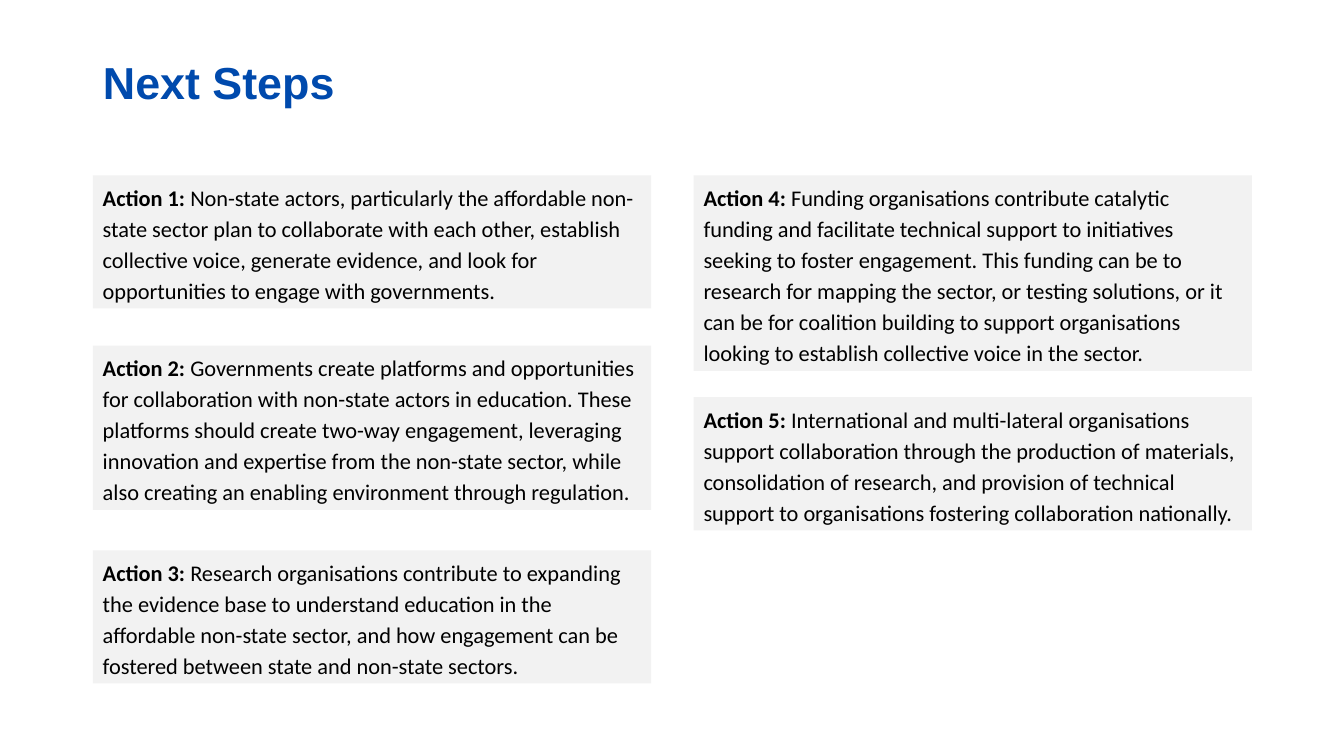
from pptx import Presentation
from pptx.dml.color import RGBColor
from pptx.enum import text
from pptx.util import Cm, Pt

BLUE = RGBColor(0x00, 0x4A, 0xAD)
BLACK = RGBColor(0x00, 0x00, 0x00)
GREY = RGBColor(0xF2, 0xF2, 0xF2)

LEFT, RIGHT = 2.34, 17.48
BOX_WIDTH = 14.07
BASE_HEIGHT, LINE_HEIGHT = 0.21, 0.786

# column, top, number of lines, action text
ACTIONS = [
    (LEFT, 4.42, 4,
     "Non-state actors, particularly the affordable non-state sector plan to "
     "collaborate with each other, establish collective voice, generate evidence, "
     "and look for opportunities to engage with governments."),
    (LEFT, 8.71, 5,
     "Governments create platforms and opportunities for collaboration with "
     "non-state actors in education. These platforms should create two-way "
     "engagement, leveraging innovation and expertise from the non-state sector, "
     "while also creating an enabling environment through regulation."),
    (LEFT, 13.87, 4,
     "Research organisations contribute to expanding the evidence base to "
     "understand education in the affordable non-state sector, and how engagement "
     "can be fostered between state and non-state sectors."),
    (RIGHT, 4.42, 6,
     "Funding organisations contribute catalytic funding and facilitate technical "
     "support to initiatives seeking to foster engagement. This funding can be to "
     "research for mapping the sector, or testing solutions, or it can be for "
     "coalition building to support organisations looking to establish collective "
     "voice in the sector."),
    (RIGHT, 10.01, 4,
     "International and multi-lateral organisations support collaboration through "
     "the production of materials, consolidation of research, and provision of "
     "technical support to organisations fostering collaboration nationally."),
]


def add_run(p, words, font="Calibri", size=16, color=BLACK, bold=False):
    r = p.add_run()
    r.text = words
    r.font.name = font
    r.font.size = Pt(size)
    r.font.color.rgb = color
    r.font.bold = bold


prs = Presentation()
prs.slide_width, prs.slide_height = Cm(33.87), Cm(19.05)
s = prs.slides.add_slide(prs.slide_layouts[5])

title = s.shapes.title
title.left, title.top, title.width, title.height = Cm(LEFT), Cm(1.02), Cm(17.25), Cm(2.26)
title.text_frame.vertical_anchor = text.MSO_ANCHOR.MIDDLE
p = title.text_frame.paragraphs[0]
p.alignment = text.PP_ALIGN.LEFT
p.line_spacing = 0.9
add_run(p, "Next Steps", font="Arial", size=32, color=BLUE, bold=True)

for number, (left, top, lines, words) in enumerate(ACTIONS, 1):
    height = BASE_HEIGHT + lines * LINE_HEIGHT
    sp = s.shapes.add_textbox(Cm(left), Cm(top), Cm(BOX_WIDTH), Cm(height))
    sp.name = f"Action {number}"
    sp.fill.solid()
    sp.fill.fore_color.rgb = GREY
    tf = sp.text_frame
    tf.word_wrap = True
    tf.auto_size = text.MSO_AUTO_SIZE.SHAPE_TO_FIT_TEXT
    p = tf.paragraphs[0]
    p.line_spacing = 1.15
    add_run(p, f"Action {number}: ", bold=True)
    add_run(p, words)

prs.save("out.pptx")
